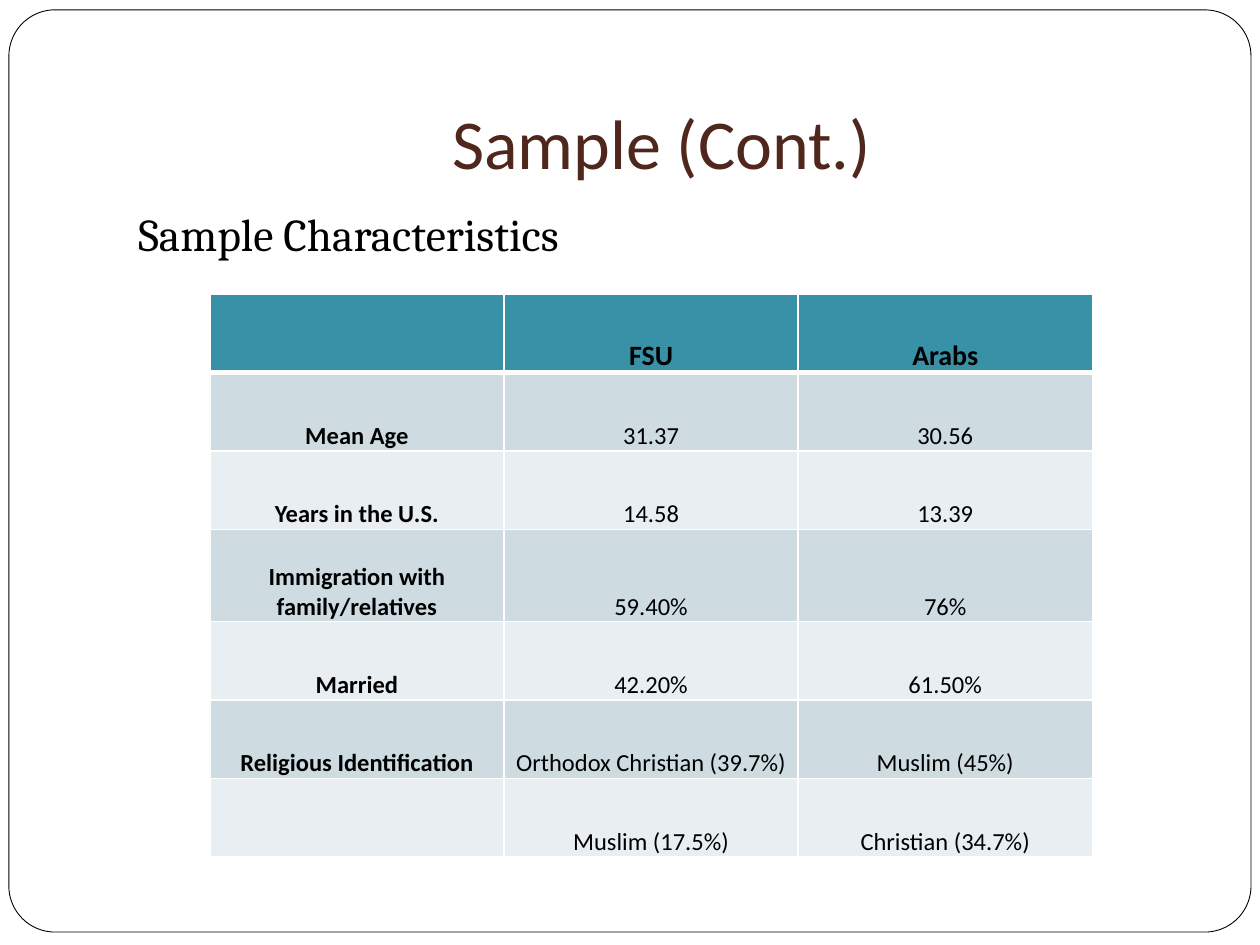
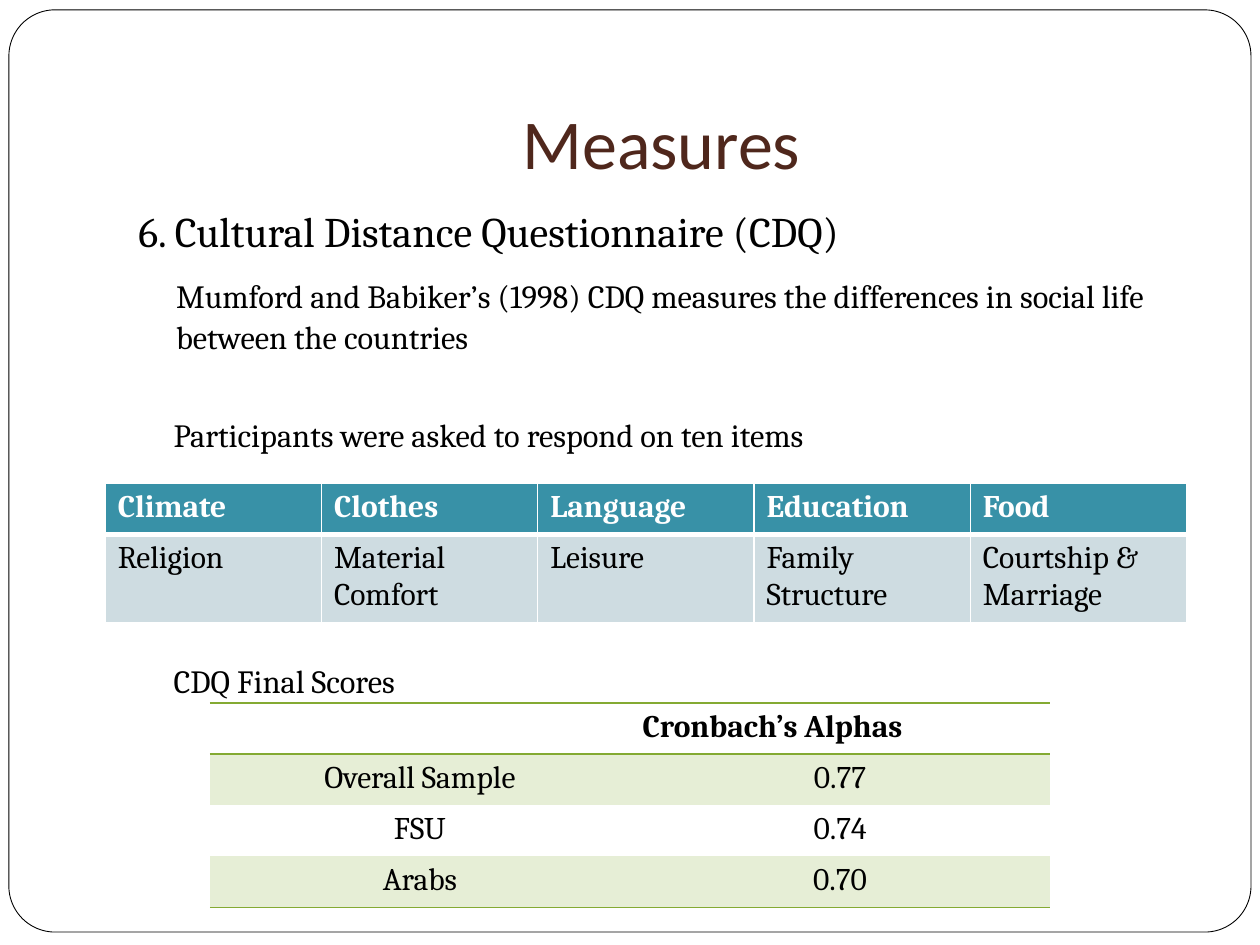
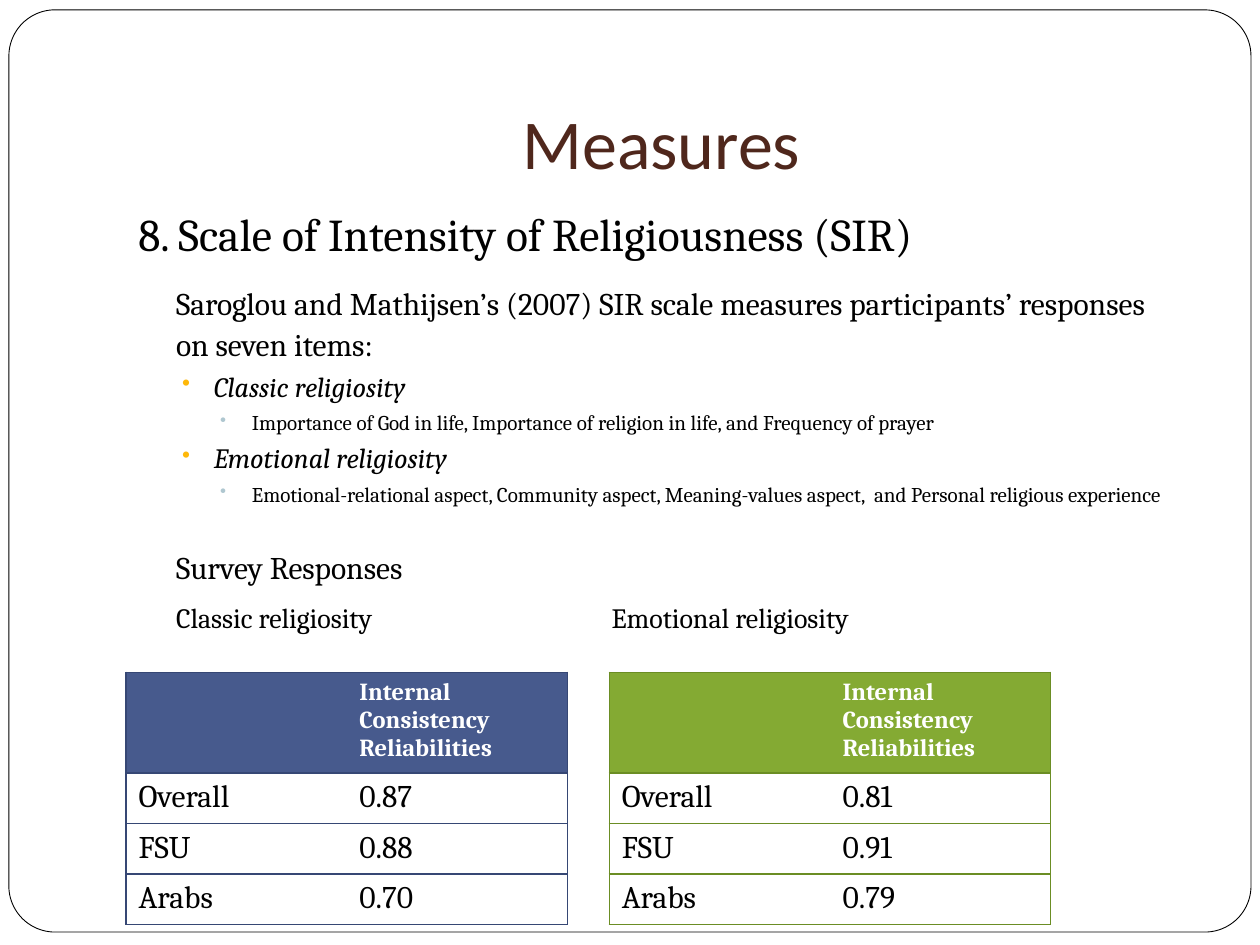
"""Builds three slides on the sample and measures of an immigration study."""
from lxml import etree
from pptx import Presentation
from pptx.dml.color import RGBColor
from pptx.enum import shapes, text
from pptx.oxml import ns
from pptx.util import Cm, Pt

WHITE = RGBColor(0xFF, 0xFF, 0xFF)
BLACK = RGBColor(0x00, 0x00, 0x00)
BROWN = RGBColor(0x4F, 0x27, 0x1C)
TEAL = RGBColor(0x38, 0x91, 0xA7)
TEAL_BAND = RGBColor(0xCE, 0xDC, 0xE1)
TEAL_PALE = RGBColor(0xE8, 0xEE, 0xF1)
GREEN = RGBColor(0x84, 0xAA, 0x33)
GREEN_DARK = RGBColor(0x6B, 0x8D, 0x24)
GREEN_PALE = RGBColor(0xE6, 0xEE, 0xD6)
BLUE = RGBColor(0x47, 0x5A, 0x8D)
BLUE_DARK = RGBColor(0x36, 0x47, 0x74)
AMBER = RGBColor(0xFE, 0xB8, 0x0A)
MIST = RGBColor(0xAF, 0xC7, 0xD0)

HEADING_FONT, BODY_FONT = "Calibri", "Cambria"
CENTER = text.PP_ALIGN.CENTER
BOTTOM = text.MSO_ANCHOR.BOTTOM
PLAIN_TABLE_STYLE = "{2D5ABB26-0587-4C30-8999-92F81FD0307C}"


def write_text(paragraph, wording, size, color=BLACK, name=BODY_FONT, **formats):
    run = paragraph.add_run()
    run.text = wording
    run.font.color.rgb = color
    for key, value in {"size": Pt(size), "name": name, **formats}.items():
        setattr(run.font, key, value)


def add_table(slide, place, column_width, heights, rows, fills, horizontal, vertical,
              header, label, value, header_align=None, align=None, cell_formats={}):
    columns = len(rows[0])
    table = slide.shapes.add_table(len(rows), columns, *map(Cm, place),
                                   Cm(column_width * columns), Cm(sum(heights))).table
    table._tbl.tblPr.find(ns.qn("a:tableStyleId")).text = PLAIN_TABLE_STYLE
    for column in table.columns:
        column.width = Cm(column_width)
    for r, row in enumerate(rows):
        table.rows[r].height = Cm(heights[r])
        for c, wording in enumerate(row):
            cell = table.cell(r, c)
            for key, setting in cell_formats.items():
                setattr(cell, key, setting)
            if fills[r] is None:
                cell.fill.background()
            else:
                cell.fill.solid()
                cell.fill.fore_color.rgb = fills[r]
            if wording:
                paragraph = cell.text_frame.paragraphs[0]
                paragraph.alignment = align if r else header_align
                write_text(paragraph, wording, **(header if r == 0 else value if c else label))
            sides = {"lnL": vertical[c], "lnR": vertical[c + 1],
                     "lnT": horizontal[r], "lnB": horizontal[r + 1]}
            for position, (tag, edge) in enumerate(sides.items()):
                line = etree.Element(ns.qn("a:" + tag))
                if edge:
                    line.set("w", str(Pt(edge[1])))
                    solid = etree.SubElement(line, ns.qn("a:solidFill"))
                    etree.SubElement(solid, ns.qn("a:srgbClr"), val=str(edge[0]))
                else:
                    etree.SubElement(line, ns.qn("a:noFill"))
                cell._tc.get_or_add_tcPr().insert(position, line)


HEADING = {"size": 26}
INTRO = {"size": 18, "left": 0.76, "before": 11.8, "line_spacing": Pt(23.4)}
TOPIC = {"size": 16, "left": 1.52, "before": 3.7, "bullet": AMBER, "italic": True}
DETAIL = {"size": 12, "left": 2.29, "before": 3.7, "bullet": MIST}
ITEM = {"size": 18.5, "left": 0.71}

contents = [
    ("Sample (Cont.)", [("Sample Characteristics", HEADING)]),
    ("Measures", [
        ("6. Cultural Distance Questionnaire (CDQ)", {"size": 24.1}),
        ("Mumford and Babiker’s (1998) CDQ measures the differences in social life "
         "between the countries", {**INTRO, "size": 18.5, "before": 10.5}),
        ("Participants were asked to respond on ten items", {**ITEM, "before": 33.8}),
        ("CDQ Final Scores", {**ITEM, "before": 117.8}),
    ]),
    ("Measures", [
        ("8. Scale of Intensity of Religiousness (SIR)", HEADING),
        ("Saroglou and Mathijsen’s (2007) SIR scale measures participants’ responses "
         "on seven items:", INTRO),
        ("Classic religiosity", TOPIC),
        ("Importance of God in life, Importance of religion in life, and Frequency of prayer",
         DETAIL),
        ("Emotional religiosity", TOPIC),
        ("Emotional-relational aspect, Community aspect, Meaning-values aspect,  and "
         "Personal religious experience", DETAIL),
        ("Survey Responses", {"size": 18, "left": 0.76, "before": 24}),
    ]),
]

presentation = Presentation()
presentation.slide_width, presentation.slide_height = Cm(25.4), Cm(19.05)
slides = []
for title, paragraphs in contents:
    slide = presentation.slides.add_slide(presentation.slide_layouts[6])
    slides.append(slide)

    frame = slide.shapes.add_shape(shapes.MSO_SHAPE.ROUNDED_RECTANGLE,
                                   Cm(0.18), Cm(0.2), Cm(25.04), Cm(18.59))
    frame.adjustments[0] = 0.05
    frame.shadow.inherit = False
    frame.fill.solid()
    frame.fill.fore_color.rgb = WHITE
    frame.line.color.rgb = BLACK
    frame.line.width = Pt(0.5)

    title_frame = slide.shapes.add_textbox(Cm(2.54), Cm(0.76), Cm(21.59), Cm(3.18)).text_frame
    for key, value in {"word_wrap": True, "vertical_anchor": BOTTOM,
                       "margin_bottom": Cm(0.25)}.items():
        setattr(title_frame, key, value)
    title_frame.paragraphs[0].alignment = CENTER
    write_text(title_frame.paragraphs[0], title, 40, BROWN, HEADING_FONT)

    body_frame = slide.shapes.add_textbox(Cm(2.54), Cm(4.02), Cm(21.59), Cm(12.7)).text_frame
    body_frame.word_wrap = True
    for index, (wording, style) in enumerate(paragraphs):
        paragraph = body_frame.add_paragraph() if index else body_frame.paragraphs[0]
        paragraph.space_before = Pt(style.get("before", 5.8))
        paragraph.line_spacing = style.get("line_spacing")
        write_text(paragraph, wording, style["size"], italic=style.get("italic", False))
        properties = paragraph._p.get_or_add_pPr()
        properties.set("marL", str(Cm(style.get("left", 0))))
        if "bullet" in style:
            properties.set("indent", str(Cm(-0.64)))
            bullet_color = etree.SubElement(properties, ns.qn("a:buClr"))
            etree.SubElement(bullet_color, ns.qn("a:srgbClr"), val=str(style["bullet"]))
            etree.SubElement(properties, ns.qn("a:buSzPct"), val="85000")
            etree.SubElement(properties, ns.qn("a:buChar"), char="•")

sample_slide, distance_slide, religiousness_slide = slides
thin_white, thick_white, thin_green = (WHITE, 1), (WHITE, 3), (GREEN, 1)
cell_text = {"size": 18}

sample_rows = [
    ("", "FSU", "Arabs"),
    ("Mean Age", "31.37", "30.56"),
    ("Years in the U.S.", "14.58", "13.39"),
    ("Immigration with family/relatives", "59.40%", "76%"),
    ("Married", "42.20%", "61.50%"),
    ("Religious Identification", "Orthodox Christian (39.7%)", "Muslim (45%)"),
    ("", "Muslim (17.5%)", "Christian (34.7%)"),
]
sample_text = {"size": 14, "name": HEADING_FONT}
add_table(sample_slide, (4.23, 5.93), 5.93, [1.58] * 3 + [1.86] + [1.58] * 3, sample_rows,
          [TEAL] + [TEAL_BAND, TEAL_PALE] * 3,
          [thin_white, thick_white] + [thin_white] * 6, [thin_white] * 4,
          header={**sample_text, "size": 16, "bold": True},
          label={**sample_text, "bold": True}, value=sample_text,
          header_align=CENTER, align=CENTER,
          cell_formats={"vertical_anchor": BOTTOM, "margin_left": Cm(0.03),
                        "margin_right": Cm(0.03), "margin_top": Cm(0.03), "margin_bottom": 0})

item_rows = [
    ("Climate", "Clothes", "Language", "Education", "Food"),
    ("Religion", "Material Comfort", "Leisure", "Family Structure", "Courtship & Marriage"),
]
add_table(distance_slide, (2.12, 9.74), 4.36, [1.03, 1.7], item_rows, [TEAL, TEAL_BAND],
          [thin_white, thick_white, thin_white], [thin_white] * 6,
          header={"size": 18, "color": WHITE, "bold": True}, label=cell_text, value=cell_text)

alpha_rows = [("", "Cronbach’s Alphas"), ("Overall Sample", "0.77"),
              ("FSU", "0.74"), ("Arabs", "0.70")]
add_table(distance_slide, (4.23, 14.17), 8.47, [1.03] * 4, alpha_rows,
          [None, GREEN_PALE, None, GREEN_PALE],
          [thin_green, thin_green, None, None, thin_green], [None] * 3,
          header={"size": 18, "bold": True}, label=cell_text, value=cell_text, align=CENTER)

reliabilities = [
    ("Classic religiosity", 3.3, 2.54, BLUE, BLUE_DARK, ("0.87", "0.88", "0.70")),
    ("Emotional religiosity", 12.08, 12.28, GREEN, GREEN_DARK, ("0.81", "0.91", "0.79")),
]
for caption, caption_left, table_left, fill, line_color, values in reliabilities:
    caption_box = slides[2].shapes.add_textbox(Cm(caption_left), Cm(11.98), Cm(8), Cm(0.95))
    caption_box.text_frame.word_wrap = True
    write_text(caption_box.text_frame.paragraphs[0], caption, 16)
    rows = [("", "Internal Consistency Reliabilities"), *zip(("Overall", "FSU", "Arabs"), values)]
    edge = (line_color, 0.75)
    add_table(religiousness_slide, (table_left, 13.55), 4.45, [1.96] + [0.99] * 3, rows,
              [fill, None, None, None], [edge] * 5, [edge, None, edge],
              header={"size": 14, "color": WHITE, "bold": True},
              label=cell_text, value=cell_text)

presentation.save("out.pptx")
